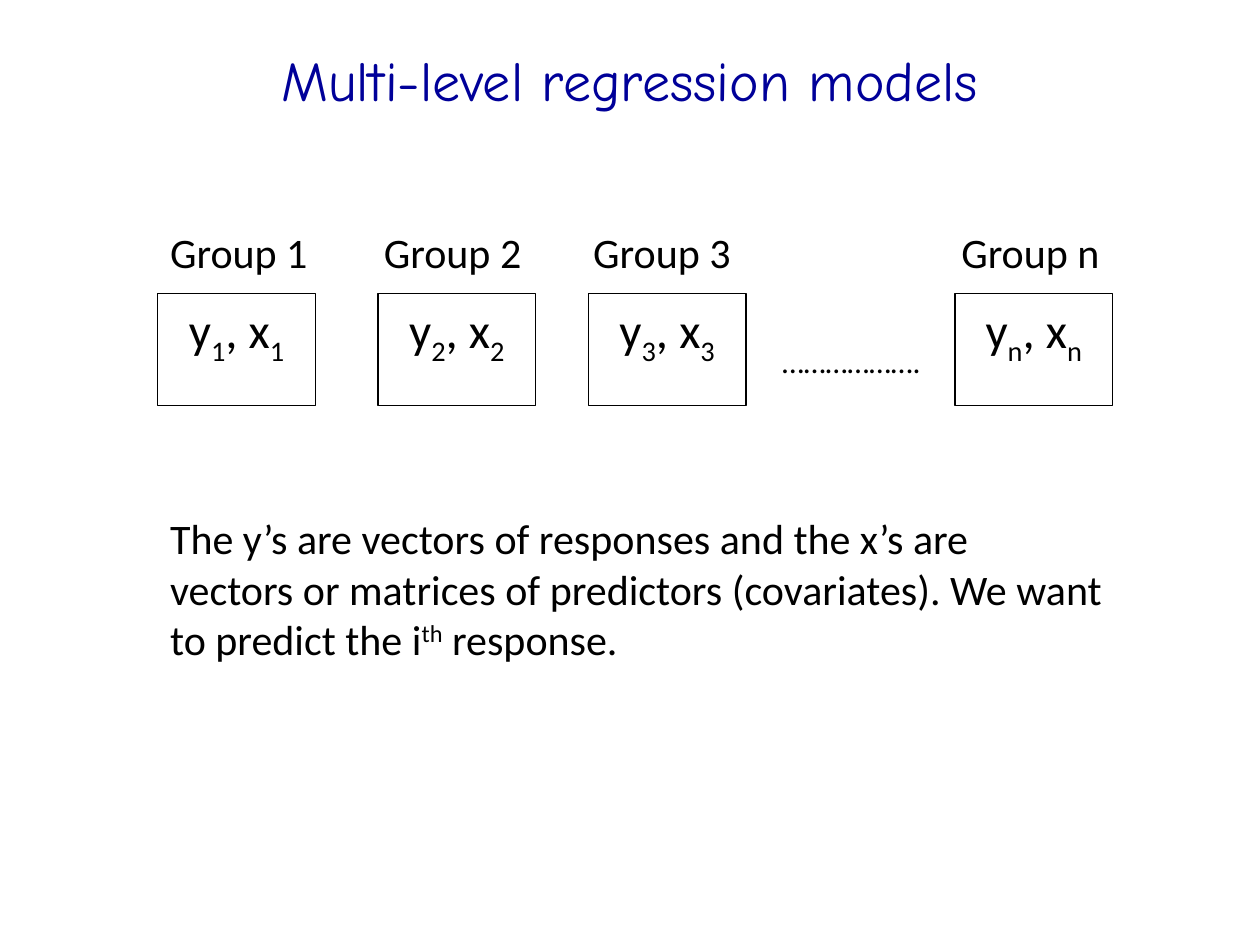
import pptx
import pptx.util
import pptx.dml.color
import pptx.enum.shapes
import pptx.enum.text

Cm = pptx.util.Cm
Pt = pptx.util.Pt
Align = pptx.enum.text.PP_ALIGN
Anchor = pptx.enum.text.MSO_ANCHOR
hues = {"title": "000099", "ink": "000000"}


def write(shape, lines, size=24, font="Calibri", hue="ink",
          align=Align.LEFT, anchor=Anchor.TOP, wrap=False):
    """Fill a shape with lines, each a list of (text, baseline shift in %)."""
    frame = shape.text_frame
    frame.word_wrap = wrap
    frame.vertical_anchor = anchor
    for i, line in enumerate(lines):
        para = frame.paragraphs[0] if i == 0 else frame.add_paragraph()
        para.alignment = align
        for words, shift in line:
            run = para.add_run()
            run.text = words
            run.font.size = Pt(size)
            run.font.name = font
            run.font.color.rgb = pptx.dml.color.RGBColor.from_string(hues[hue])
            if shift:
                run.font._element.set("baseline", str(shift * 1000))


deck = pptx.Presentation()
deck.slide_width = Cm(25.4)
deck.slide_height = Cm(19.05)
slide = deck.slides.add_slide(deck.slide_layouts[6])
shapes = slide.shapes

# Title
title = shapes.add_textbox(Cm(1.27), Cm(0), Cm(22.86), Cm(3.18))
write(title, [[("Multi-level regression models", 0)]], size=32,
      font="Comic Neue", hue="title", align=Align.CENTER,
      anchor=Anchor.MIDDLE, wrap=True)

# Groups: a label above a box of responses and predictors
groups = [("1", 3.18, 3.18), ("2", 7.62, 7.49),
          ("3", 11.86, 11.71), ("n", 19.25, 19.13)]
for name, left, start in groups:
    box = shapes.add_shape(pptx.enum.shapes.MSO_SHAPE.RECTANGLE,
                           Cm(left), Cm(5.92), Cm(3.18), Cm(2.26))
    box.shadow.inherit = False
    box.fill.background()
    box.line.color.rgb = pptx.dml.color.RGBColor.from_string(hues["ink"])
    box.line.width = Pt(0.75)
    write(box, [[("y", 0), (name, -25), (", x", 0), (name, -25)]],
          size=28, align=Align.CENTER, wrap=True)

    label = shapes.add_textbox(Cm(start), Cm(4.45), Cm(3.3), Cm(1.27))
    write(label, [[("Group " + name, 0)]])

# Dots for the groups between
dots = shapes.add_textbox(Cm(15.52), Cm(6.78), Cm(3.33), Cm(1.02))
write(dots, [[("……………….", 0)]], size=18)

# Explanation
note = shapes.add_textbox(Cm(3.18), Cm(10.21), Cm(19.46), Cm(3.33))
write(note, [
    [("The y’s are vectors of responses and the x’s are", 0)],
    [("vectors or matrices of predictors (covariates). We want", 0)],
    [("to predict the i", 0), ("th", 30), (" response.", 0)],
])

deck.save("out.pptx")
